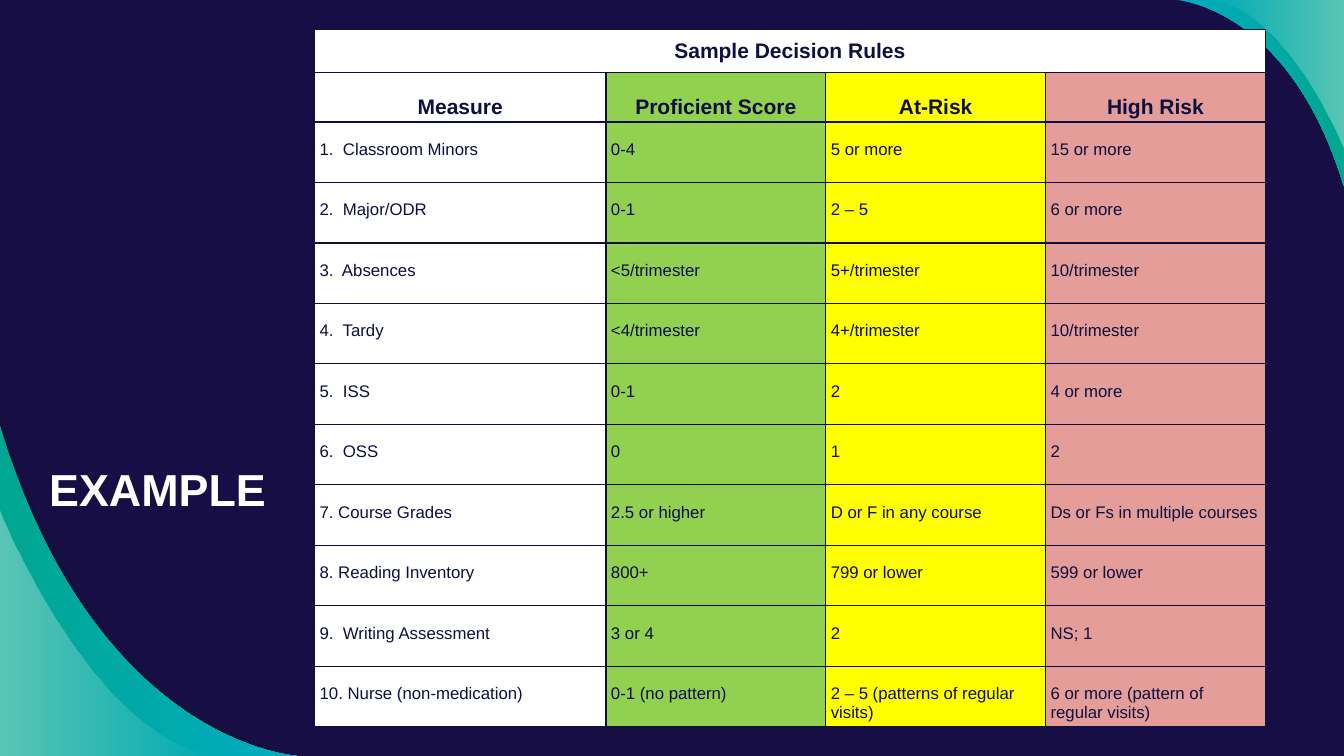
from lxml import etree
from pptx import Presentation
from pptx import util as u
from pptx.dml.color import RGBColor
from pptx.enum import text
from pptx.oxml.ns import qn

COLORS = {
    "background": "160E44",
    "ink": "0D0F41",
    "white": "FFFFFF",
    "shade": "12102F",
    "cyan": "00ACC2",
    "teal": "00A791",
    "green": "92D050",
    "yellow": "FFFF00",
    "red": "E49D98",
}
COLUMN_FILLS = ["white", "green", "yellow", "red"]
COLUMN_WIDTHS = [2.89, 2.18, 2.18, 2.18]
HEADERS = ["Measure", "Proficient Score", "At-Risk", "High Risk"]
RULES = [
    ["1.  Classroom Minors", "0-4", "5 or more", "15 or more"],
    ["2.  Major/ODR", "0-1", "2 – 5", "6 or more"],
    ["3.  Absences", "<5/trimester", "5+/trimester", "10/trimester"],
    ["4.  Tardy", "<4/trimester", "4+/trimester", "10/trimester"],
    ["5.  ISS", "0-1", "2", "4 or more"],
    ["6.  OSS", "0", "1", "2"],
    ["7. Course Grades", "2.5 or higher", "D or F in any course",
     "Ds or Fs in multiple courses"],
    ["8. Reading Inventory", "800+", "799 or lower", "599 or lower"],
    ["9.  Writing Assessment", "3 or 4", "2", "NS; 1"],
    ["10. Nurse (non-medication)", "0-1 (no pattern)",
     "2 – 5 (patterns of regular visits)",
     "6 or more (pattern of regular visits)"],
]


def rgb(name):
    return RGBColor.from_string(COLORS[name])


def set_alpha(element, percent):
    """Set the opacity of the colour inside a fill or gradient stop."""
    if percent < 100:
        color = element.find(".//" + qn("a:srgbClr"))
        etree.SubElement(color, qn("a:alpha"), val=str(percent * 1000))


def bend(shape):
    """Turn the first three line segments of a freeform into one cubic curve."""
    lines = list(shape._element.iter(qn("a:lnTo")))[:3]
    curve = etree.Element(qn("a:cubicBezTo"))
    lines[0].addprevious(curve)
    for line in lines:
        curve.append(line[0])
        line.getparent().remove(line)


class SlideBuilder:
    font = "Arial"

    def __init__(self, presentation):
        self.slide = presentation.slides.add_slide(presentation.slide_layouts[6])
        fill = self.slide.background.fill
        fill.solid()
        fill.fore_color.rgb = rgb("background")

    def style(self, paragraph, size, color, bold=False):
        font = paragraph.font
        font.name, font.size, font.bold = self.font, u.Pt(size), bold
        font.color.rgb = rgb(color)

    def corner(self, curve, corner_point, stops):
        """Fill the area between a curve and a slide corner.

        stops holds (colour, opacity) pairs from left to right.
        """
        points = [(u.Inches(x), u.Inches(y)) for x, y in curve + [corner_point]]
        outline = self.slide.shapes.build_freeform(*points[0])
        outline.add_line_segments(points[1:], close=True)
        shape = outline.convert_to_shape()
        bend(shape)
        shape.shadow.inherit = False
        shape.line.fill.background()
        properties = shape._element.spPr
        if len(stops) == 1:
            color, opacity = stops[0]
            shape.fill.solid()
            shape.fill.fore_color.rgb = rgb(color)
            set_alpha(properties.find(qn("a:solidFill")), opacity)
            return
        shape.fill.gradient()
        shape.fill.gradient_angle = 0
        elements = properties.iter(qn("a:gs"))
        for stop, element, (color, opacity) in zip(
                shape.fill.gradient_stops, elements, stops):
            stop.color.rgb = rgb(color)
            set_alpha(element, opacity)

    def table(self, left, top, widths, heights):
        size = [u.Inches(sum(widths)), u.Inches(sum(heights))]
        table = self.slide.shapes.add_table(
            len(heights), len(widths), u.Inches(left), u.Inches(top), *size).table
        table.first_row = table.horz_banding = False
        for column, width in zip(table.columns, widths):
            column.width = u.Inches(width)
        for row, height in zip(table.rows, heights):
            row.height = u.Inches(height)
        return table

    def cell(self, cell, words, fill, size=12, top=0.18, header=False):
        cell.margin_left = cell.margin_right = u.Inches(0.05)
        cell.margin_top, cell.margin_bottom = u.Inches(top), 0
        cell.fill.solid()
        cell.fill.fore_color.rgb = rgb(fill)
        self.borders(cell)
        cell.text = words
        paragraph = cell.text_frame.paragraphs[0]
        if header:
            paragraph.alignment = text.PP_ALIGN.CENTER
        self.style(paragraph, size, "ink", header)

    def borders(self, cell):
        properties = cell._tc.get_or_add_tcPr()
        for index, side in enumerate("LRTB"):
            line = etree.Element(qn("a:ln" + side), w=str(u.Pt(1)))
            solid = etree.SubElement(line, qn("a:solidFill"))
            etree.SubElement(solid, qn("a:srgbClr"), val=COLORS["ink"])
            properties.insert(index, line)

    def title(self, words, left, top, width, height):
        box = self.slide.shapes.add_textbox(
            *(u.Inches(value) for value in (left, top, width, height)))
        frame = box.text_frame
        frame.word_wrap = True
        frame.text = words
        self.style(frame.paragraphs[0], 32, "white", bold=True)


def main():
    presentation = Presentation()
    presentation.slide_width = u.Inches(13.33)
    presentation.slide_height = u.Inches(7.5)
    builder = SlideBuilder(presentation)

    # Curved corners
    bottom_left, top_right = (0, 7.5), (13.33, 0)
    builder.corner([(0, 4.13), (0.98, 7.39), (3.03, 7.5), (3.03, 7.5)],
                   bottom_left, [("shade", 54)])
    builder.corner([(0, 4.22), (0.95, 7.39), (2.95, 7.5), (2.95, 7.5)],
                   bottom_left, [("teal", 100), ("cyan", 100)])
    builder.corner([(0, 5.06), (0, 5.06), (0.91, 7.35), (2.16, 7.5)],
                   bottom_left, [("white", 36), ("white", 0)])
    builder.corner([(11.67, 0), (11.67, 0), (12.79, 0.06), (13.33, 1.85)],
                   top_right, [("cyan", 100), ("teal", 100)])
    builder.corner([(12.01, 0), (12.77, 0.09), (13.33, 1.49), (13.33, 1.49)],
                   top_right, [("white", 0), ("white", 36)])

    # Decision table
    table = builder.table(3.12, 0.29, COLUMN_WIDTHS, [0.43, 0.49] + [0.6] * len(RULES))
    for column in range(len(HEADERS)):
        builder.cell(table.cell(0, column), "", "white", 15, 0, header=True)
    heading = table.cell(0, 0)
    heading.merge(table.cell(0, len(HEADERS) - 1))
    heading.text_frame.paragraphs[0].text = "Sample Decision Rules"
    heading.vertical_anchor = text.MSO_ANCHOR.MIDDLE
    for column, (words, fill) in enumerate(zip(HEADERS, COLUMN_FILLS)):
        builder.cell(table.cell(1, column), words, fill, 15, 0.23, header=True)
    for row, rule in enumerate(RULES, start=2):
        for column, (words, fill) in enumerate(zip(rule, COLUMN_FILLS)):
            builder.cell(table.cell(row, column), words, fill)

    # Slide title
    builder.title("EXAMPLE", 0.39, 4.53, 4.16, 0.89)
    presentation.save("out.pptx")


if __name__ == "__main__":
    main()
